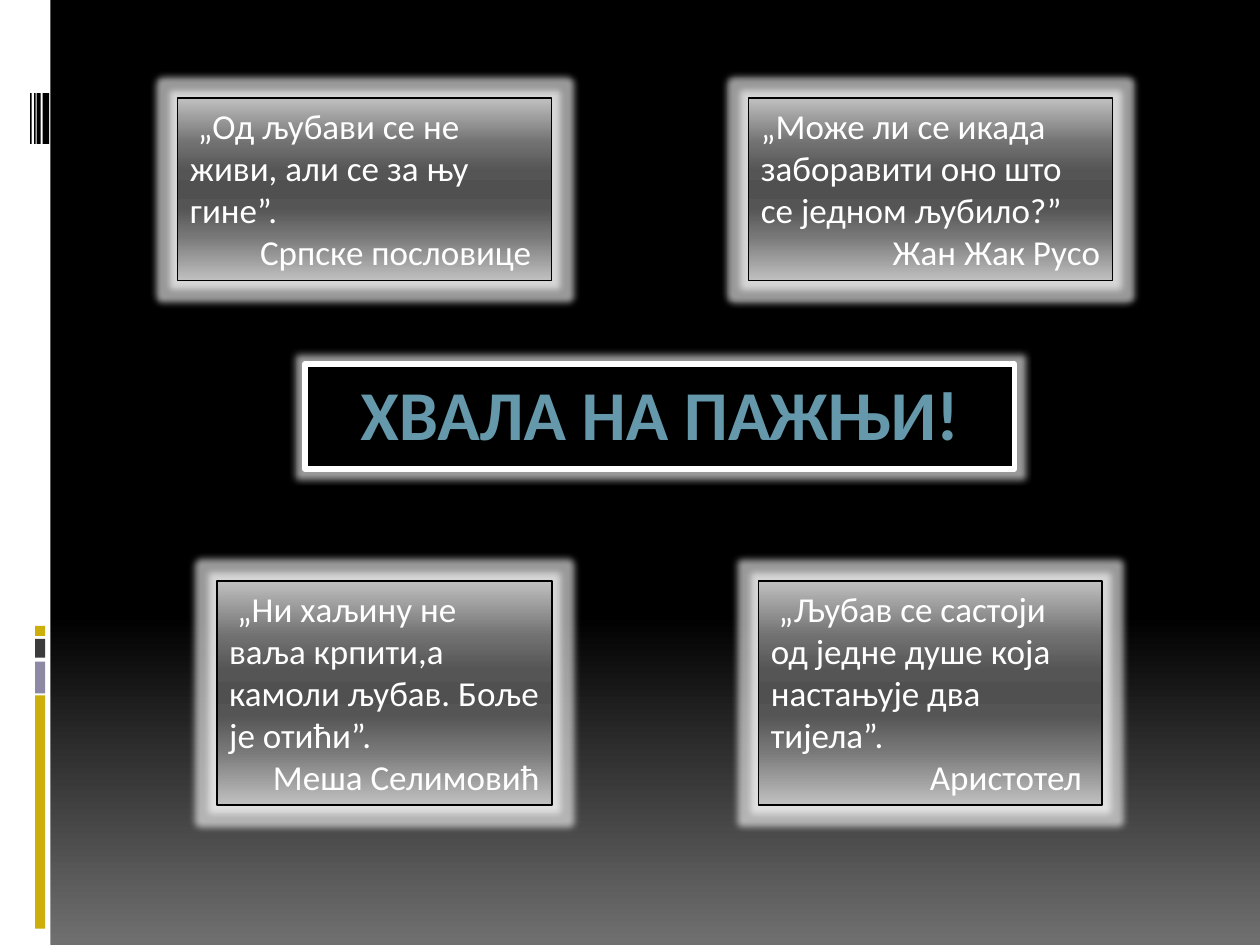
from dataclasses import dataclass

from lxml.etree import SubElement
from pptx import Presentation
from pptx.dml.color import RGBColor
from pptx.enum.shapes import MSO_SHAPE as Preset
from pptx.enum.text import MSO_ANCHOR as Anchor, MSO_AUTO_SIZE as AutoSize, PP_ALIGN as Align
from pptx.oxml.ns import qn
from pptx.util import Cm, Pt

FONT = "Calibri"
WHITE, BLACK, GOLD, VIOLET, GRAY, TEAL = "FFFFFF", "000000", "CCAF0A", "8D89A4", "3B3B3B", "6598AA"
BACKDROP = [(0, BLACK), (65, BLACK), (100, "707070")]
METAL = [(0, "C0C0C0"), (25, "707070"), (40, "555555"), (50, "505050"),
         (60, "555555"), (75, "767676"), (100, "C0C0C0")]


@dataclass
class Box:
    """A place on the slide, in centimetres."""
    left: float
    top: float
    width: float
    height: float


@dataclass
class Quote:
    box: Box
    text: str
    author: str


@dataclass
class Strip:
    box: Box
    color: str


TOP_ROW, BOTTOM_ROW = (1.98, 3.68), (11.71, 4.52)


def quote_box(left: float, width: float, row: tuple[float, float]) -> Box:
    return Box(left, row[0], width, row[1])


QUOTES = [
    Quote(quote_box(3.58, 7.54, TOP_ROW),
          " „Од љубави се не живи, али се за њу гине”.", "Српске пословице "),
    Quote(quote_box(15.29, 6.93, BOTTOM_ROW),
          " „Љубав се састоји од једне душе која настањује два тијела”.", "Аристотел "),
    Quote(quote_box(4.37, 6.76, BOTTOM_ROW),
          " „Ни хаљину не ваља крпити,а камоли љубав. Боље је отићи”.", "Меша Селимовић"),
    Quote(quote_box(15.09, 7.34, TOP_ROW),
          "„Може ли се икада заборавити оно што се једном љубило?”", "Жан Жак Русо"),
]

# Sidebar: white band, stacked color blocks, thin bars
STRIPS = [Strip(Box(0, 0, 1.02, 19.05), WHITE)]
STRIPS += [Strip(Box(0.71, top, 0.2, height), color) for top, height, color in [
    (14.02, 4.7, GOLD), (13.34, 0.64, VIOLET), (12.88, 0.38, GRAY), (12.62, 0.2, GOLD)]]
STRIPS += [Strip(Box(left, 1.88, width, 1.02), BLACK) for left, width in [
    (0.86, 0.13), (0.74, 0.08), (0.69, 0.03), (0.61, 0.03)]]


def rgb(color: str) -> RGBColor:
    return RGBColor.from_string(color)


def place(shape, box: Box) -> None:
    shape.left, shape.top = Cm(box.left), Cm(box.top)
    shape.width, shape.height = Cm(box.width), Cm(box.height)


def add_box(slide, box: Box):
    shape = slide.shapes.add_shape(
        Preset.RECTANGLE, Cm(box.left), Cm(box.top), Cm(box.width), Cm(box.height))
    shape.shadow.inherit = False
    return shape


def set_gradient(fill, parent, stops: list[tuple[int, str]]) -> None:
    """Fill from top to bottom with the given stops."""
    fill.gradient()
    fill.gradient_angle = 270
    stop_list = parent.find(f".//{qn('a:gsLst')}")
    for stop in list(stop_list):
        stop_list.remove(stop)
    for position, color in stops:
        stop = SubElement(stop_list, qn("a:gs"), pos=str(position * 1000))
        SubElement(stop, qn("a:srgbClr"), val=color)


def set_line(shape, color: str, width: float) -> None:
    shape.line.color.rgb = rgb(color)
    shape.line.width = Pt(width)


def add_glow(shape) -> None:
    shape.shadow.inherit = False
    effects = shape.element.spPr.find(qn("a:effectLst"))
    glow = SubElement(effects, qn("a:glow"), rad=str(Pt(8)))
    color = SubElement(glow, qn("a:srgbClr"), val=WHITE)
    SubElement(color, qn("a:alpha"), val="60000")


def write(paragraph, text: str, size: float, color: str, align) -> None:
    paragraph.text = text
    paragraph.alignment = align
    paragraph.font.name = FONT
    paragraph.font.size = Pt(size)
    paragraph.font.color.rgb = rgb(color)


def add_strip(slide, strip: Strip) -> None:
    shape = add_box(slide, strip.box)
    shape.fill.solid()
    shape.fill.fore_color.rgb = rgb(strip.color)
    shape.line.fill.background()


def add_quote(slide, quote: Quote) -> None:
    shape = add_box(slide, quote.box)
    set_gradient(shape.fill, shape.element.spPr, METAL)
    set_line(shape, BLACK, 0.94)
    add_glow(shape)
    frame = shape.text_frame
    frame.word_wrap = True
    frame.auto_size = AutoSize.SHAPE_TO_FIT_TEXT
    frame.vertical_anchor = Anchor.TOP
    write(frame.paragraphs[0], quote.text, 20, WHITE, Align.LEFT)
    write(frame.add_paragraph(), quote.author, 20, WHITE, Align.RIGHT)


def format_title(title) -> None:
    place(title, Box(6.15, 7.34, 14.3, 1.96))
    title.fill.solid()
    title.fill.fore_color.rgb = rgb(BLACK)
    set_line(title, WHITE, 3)
    add_glow(title)
    frame = title.text_frame
    frame.word_wrap = True
    frame.auto_size = AutoSize.SHAPE_TO_FIT_TEXT
    frame.vertical_anchor = Anchor.TOP
    paragraph = frame.paragraphs[0]
    write(paragraph, "ХВАЛА НА ПАЖЊИ!", 40, TEAL, Align.CENTER)
    paragraph.font.bold = True


def main() -> None:
    presentation = Presentation()
    presentation.slide_width, presentation.slide_height = Cm(25.4), Cm(19.05)
    slide = presentation.slides.add_slide(presentation.slide_layouts[5])
    set_gradient(slide.background.fill, slide.element, BACKDROP)
    for strip in STRIPS:
        add_strip(slide, strip)
    format_title(slide.shapes.title)
    for quote in QUOTES:
        add_quote(slide, quote)
    presentation.save("out.pptx")


if __name__ == "__main__":
    main()
